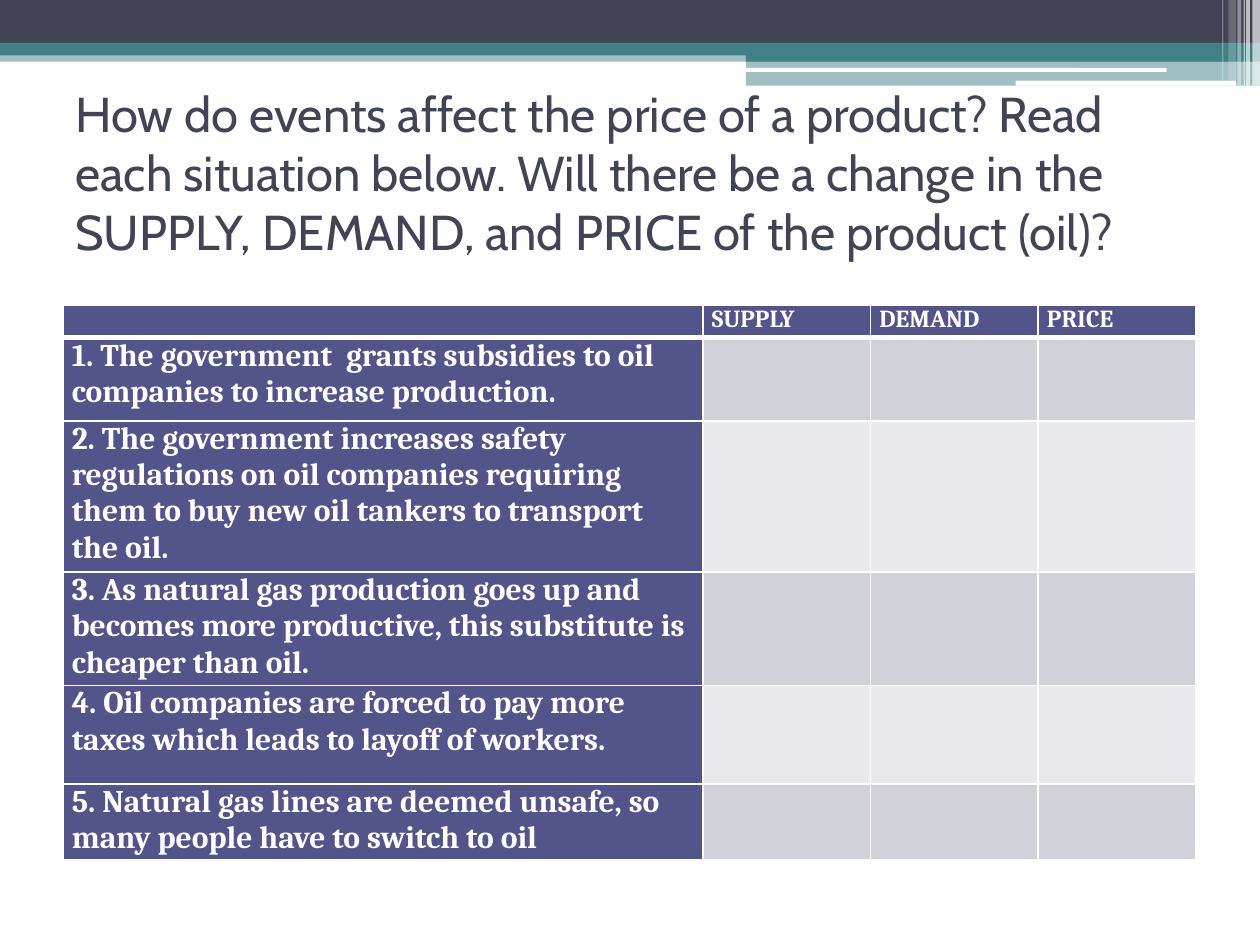
"""Build a slide with a worksheet table on oil supply, demand and price."""
import pptx
import pptx.dml.color
import pptx.enum.shapes
import pptx.enum.text
import pptx.oxml
import pptx.util
from lxml import etree
from pptx.oxml.ns import qn

Inches = pptx.util.Inches
Pt = pptx.util.Pt
RGBColor = pptx.dml.color.RGBColor
MSO_SHAPE = pptx.enum.shapes.MSO_SHAPE

SLATE = RGBColor(0x42, 0x44, 0x56)
TEAL = RGBColor(0x43, 0x80, 0x86)
WHITE = RGBColor(0xFF, 0xFF, 0xFF)
INDIGO = RGBColor(0x53, 0x54, 0x8A)
BAND_DARK = RGBColor(0xD1, 0xD1, 0xDA)
BAND_LIGHT = RGBColor(0xE9, 0xE9, 0xED)

TITLE = (
    "How do events affect the price of a product? Read each situation below. "
    "Will there be a change in the SUPPLY, DEMAND, and PRICE of the product (oil)?"
)
HEADERS = ["", "SUPPLY", "DEMAND", "PRICE"]
SITUATIONS = [
    "1. The government  grants subsidies to oil companies to increase production.",
    "2. The government increases safety regulations on oil companies requiring "
    "them to buy new oil tankers to transport the oil.",
    "3. As natural gas production goes up and becomes more productive, "
    "this substitute is cheaper than oil.",
    "4. Oil companies are forced to pay more taxes which leads to layoff of workers.",
    "5. Natural gas lines are deemed unsafe, so many people have to switch to oil",
]
COLUMN_WIDTHS = [5.08, 1.33, 1.33, 1.25]
ROW_HEIGHTS = [0.26, 0.66, 1.15, 0.86, 0.78, 0.57]

BANDS = [
    (0, 0.4, 10, 0.09, TEAL, 50),
    (0, 0, 10, 0.34, SLATE, 100),
    (0, 0.34, 10, 0.1, TEAL, 100),
    (5.92, 0.39, 4.08, 0.1, TEAL, 100),
    (5.92, 0.48, 4.08, 0.2, TEAL, 50),
]
ROUNDED_LINES = [(5.91, 0.54, 3.35, 0.03), (8.06, 0.64, 1.75, 0.04)]
STRIPES = [
    (9.94, 0.06, 0.68, 65),
    (9.89, 0.03, 0.68, 65),
    (9.87, 0.01, 0.68, 60),
    (9.82, 0.03, 0.68, 40),
    (9.75, 0.06, 0.64, 20),
    (9.7, 0.01, 0.64, 30),
]


class SlideBuilder:
    """Hold the fonts and the current slide, and add elements to it."""

    title_font = "Cabin"
    table_font = "Cambria"

    def __init__(self, slide):
        self.slide = slide

    def bar(self, left, top, width, height, color, opacity=100, kind=MSO_SHAPE.RECTANGLE):
        shape = self.slide.shapes.add_shape(
            kind, Inches(left), Inches(top), Inches(width), Inches(height)
        )
        shape.shadow.inherit = False
        shape.line.fill.background()
        shape.fill.solid()
        shape.fill.fore_color.rgb = color
        if opacity < 100:
            color_element = shape.fill._xPr.find(".//" + qn("a:srgbClr"))
            etree.SubElement(color_element, qn("a:alpha"), val=str(opacity * 1000))

    def title(self, text, left, top, width, height):
        box = self.slide.shapes.add_textbox(
            Inches(left), Inches(top), Inches(width), Inches(height)
        )
        text_frame = box.text_frame
        text_frame.word_wrap = True
        text_frame.vertical_anchor = pptx.enum.text.MSO_ANCHOR.MIDDLE
        text_frame.margin_bottom = Inches(0.49)
        text_frame.text = text
        self.format_run(text_frame.paragraphs[0].runs[0], self.title_font, 28, SLATE)

    def format_run(self, run, font_name, size, color, bold=False):
        run.font.name = font_name
        run.font.size = Pt(size)
        run.font.color.rgb = color
        run.font.bold = bold

    def table(self, rows, left, top, column_widths, row_heights):
        table = self.slide.shapes.add_table(
            len(rows), len(column_widths), Inches(left), Inches(top),
            Inches(sum(column_widths)), Inches(sum(row_heights)),
        ).table
        for column, width in zip(table.columns, column_widths):
            column.width = Inches(width)
        for row, height in zip(table.rows, row_heights):
            row.height = Inches(height)
        for row_index, texts in enumerate(rows):
            band = BAND_DARK if row_index % 2 else BAND_LIGHT
            for column_index, text in enumerate(texts):
                is_heading = row_index == 0 or column_index == 0
                cell = table.cell(row_index, column_index)
                self.borders(cell, 3 if row_index == 1 else 1, 3 if row_index == 0 else 1)
                self.cell(cell, text, INDIGO if is_heading else band,
                          14 if row_index == 0 else 18)

    def cell(self, cell, text, fill, size):
        cell.fill.solid()
        cell.fill.fore_color.rgb = fill
        cell.margin_left = cell.margin_right = Inches(0.07)
        cell.margin_top = cell.margin_bottom = 0
        paragraph = cell.text_frame.paragraphs[0]
        if text:
            paragraph.text = text
            self.format_run(paragraph.runs[0], self.table_font, size, WHITE, True)
        else:
            etree.SubElement(paragraph._p, qn("a:endParaRPr"), sz=str(size * 100))

    def borders(self, cell, top_width, bottom_width):
        properties = cell._tc.get_or_add_tcPr()
        widths = {"L": 1, "R": 1, "T": top_width, "B": bottom_width}
        for side, width in widths.items():
            line = etree.SubElement(properties, qn(f"a:ln{side}"), w=str(Pt(width)))
            fill = etree.SubElement(line, qn("a:solidFill"))
            etree.SubElement(fill, qn("a:srgbClr"), val=str(WHITE))


def main():
    presentation = pptx.Presentation()
    presentation.slide_width = Inches(10)
    presentation.slide_height = Inches(7.5)
    builder = SlideBuilder(presentation.slides.add_slide(presentation.slide_layouts[6]))

    for band in BANDS:
        builder.bar(*band)
    for line in ROUNDED_LINES:
        builder.bar(*line, WHITE, kind=MSO_SHAPE.ROUNDED_RECTANGLE)
    for left, width, height, opacity in STRIPES:
        builder.bar(left, 0, width, height, WHITE, opacity)

    builder.title(TITLE, 0.5, 1, 9, 1.17)
    rows = [HEADERS] + [[situation, "", "", ""] for situation in SITUATIONS]
    builder.table(rows, 0.5, 2.42, COLUMN_WIDTHS, ROW_HEIGHTS)
    presentation.save("out.pptx")


if __name__ == "__main__":
    main()
